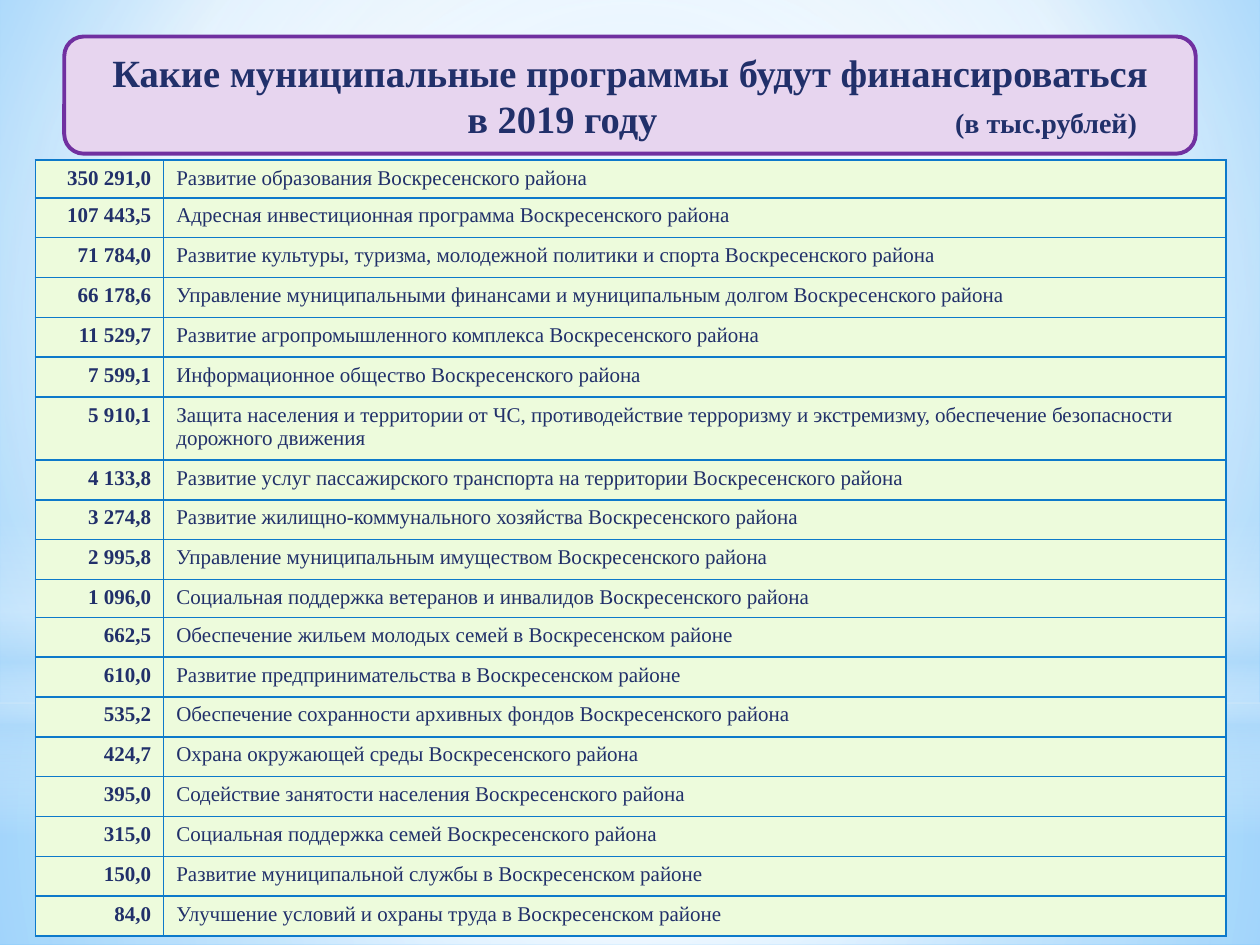
import dataclasses
import typing

import lxml.etree
import pptx
import pptx.dml.color
import pptx.enum.shapes
import pptx.enum.text
import pptx.oxml
import pptx.oxml.ns
import pptx.util

W, H = 10, 7.5
FONT = "Times New Roman"
COLORS = {
    "text": "21306A",
    "title_fill": "E7D5EF",
    "title_line": "7030A0",
    "cell": "EDFBDC",
    "border": "0D79CA",
    "white": "FFFFFF",
    "haze": "B4DCFA",
    "sky": "9ED5FF",
    "deep_sky": "5BB9FF",
}
SHAPES = pptx.enum.shapes.MSO_SHAPE
ALIGN = pptx.enum.text.PP_ALIGN


class Stop(typing.NamedTuple):
    pos: int
    color: str
    alpha: int = 100


@dataclasses.dataclass
class Gradient:
    stops: list[Stop]
    focus: tuple[int, int, int, int] | None = (50, 50, 50, 50)


@dataclasses.dataclass
class Glow:
    shape: int
    top: float
    height: float
    gradient: Gradient


class Program(typing.NamedTuple):
    amount: str
    name: str
    height: float | None = None


SKY = Gradient([Stop(0, "sky"), Stop(60, "white"), Stop(100, "deep_sky")], (20, 10, 20, 60))
GLOWS = [
    Glow(SHAPES.RECTANGLE, 0.744, 0.256, Gradient(
        [Stop(0, "white", 91), Stop(37, "white", 76), Stop(100, "haze", 79)])),
    Glow(SHAPES.RECTANGLE, 0, 0.744, Gradient(
        [Stop(0, "white", 89), Stop(48, "white", 62), Stop(100, "haze", 79)])),
    Glow(SHAPES.RECTANGLE, 0.55, 0.333, Gradient(
        [Stop(0, "white", 0), Stop(29, "white", 30), Stop(45, "haze", 40),
         Stop(55, "white", 26), Stop(65, "haze", 60), Stop(100, "white", 0)], None)),
    Glow(SHAPES.OVAL, 0.233, 0.744, Gradient([Stop(0, "white"), Stop(56, "white", 0)])),
]
PROGRAMS = [
    Program("350 291,0", "Развитие образования Воскресенского района", 0.3),
    Program("107 443,5", "Адресная инвестиционная программа Воскресенского района"),
    Program("71 784,0", "Развитие культуры, туризма, молодежной политики и спорта Воскресенского района"),
    Program("66 178,6", "Управление муниципальными финансами и муниципальным долгом Воскресенского района"),
    Program("11 529,7", "Развитие агропромышленного комплекса Воскресенского района"),
    Program("7 599,1", "Информационное общество Воскресенского района"),
    Program("5 910,1", "Защита населения и территории от ЧС, противодействие терроризму и экстремизму, "
            "обеспечение безопасности дорожного движения", 0.5),
    Program("4 133,8", "Развитие услуг пассажирского транспорта на территории Воскресенского района"),
    Program("3 274,8", "Развитие жилищно-коммунального хозяйства Воскресенского района"),
    Program("2 995,8", "Управление муниципальным имуществом Воскресенского района"),
    Program("1 096,0", "Социальная поддержка ветеранов и инвалидов Воскресенского района", 0.3),
    Program("662,5", "Обеспечение жильем молодых семей в Воскресенском районе"),
    Program("610,0", "Развитие предпринимательства в Воскресенском районе"),
    Program("535,2", "Обеспечение сохранности архивных фондов Воскресенского района"),
    Program("424,7", "Охрана окружающей среды Воскресенского района"),
    Program("395,0", "Содействие занятости населения Воскресенского района"),
    Program("315,0", "Социальная поддержка семей Воскресенского района"),
    Program("150,0", "Развитие муниципальной службы в Воскресенском районе"),
    Program("84,0", "Улучшение условий и охраны труда в Воскресенском районе"),
]


def inches(*values: float) -> list[int]:
    return [pptx.util.Inches(v) for v in values]


def rgb(name: str) -> pptx.dml.color.RGBColor:
    return pptx.dml.color.RGBColor.from_string(COLORS[name])


def set_gradient(fill, parent, gradient: Gradient) -> None:
    fill.solid()
    stops = "".join(
        f'<a:gs pos="{g.pos * 1000}"><a:srgbClr val="{COLORS[g.color]}">'
        f'<a:alpha val="{g.alpha * 1000}"/></a:srgbClr></a:gs>' for g in gradient.stops)
    if gradient.focus:
        edges = " ".join(f'{k}="{v * 1000}"' for k, v in zip("ltrb", gradient.focus))
        direction = f'<a:path path="circle"><a:fillToRect {edges}/></a:path>'
    else:
        direction = '<a:lin ang="5400000" scaled="0"/>'
    xml = (f'<a:gradFill {pptx.oxml.ns.nsdecls("a")} rotWithShape="1">'
           f"<a:gsLst>{stops}</a:gsLst>{direction}</a:gradFill>")
    solid = parent.find(pptx.oxml.ns.qn("a:solidFill"))
    parent.replace(solid, pptx.oxml.parse_xml(xml))


def set_font(font, size: float, bold: bool) -> None:
    font.name = FONT
    font.size = pptx.util.Pt(size)
    font.bold = bold
    font.color.rgb = rgb("text")


def add_glow(s, glow: Glow) -> None:
    sp = s.shapes.add_shape(glow.shape, *inches(0, glow.top * H, W, glow.height * H))
    sp.shadow.inherit = False
    sp.line.fill.background()
    set_gradient(sp.fill, sp._element.spPr, glow.gradient)


def add_title(s) -> None:
    sp = s.shapes.add_shape(SHAPES.ROUNDED_RECTANGLE, *inches(0.51, 0.29, 8.98, 0.93))
    sp.shadow.inherit = False
    sp.fill.solid()
    sp.fill.fore_color.rgb = rgb("title_fill")
    sp.line.color.rgb = rgb("title_line")
    sp.line.width = pptx.util.Pt(2.25)
    tf = sp.text_frame
    tf.word_wrap = True
    tf.vertical_anchor = pptx.enum.text.MSO_ANCHOR.MIDDLE
    p = tf.paragraphs[0]
    p.alignment = ALIGN.CENTER
    p.add_run().text = "Какие муниципальные программы будут финансироваться"
    set_font(p.font, 22, True)
    p = tf.add_paragraph()
    p.alignment = ALIGN.LEFT
    tabs = lxml.etree.SubElement(p._p.get_or_add_pPr(), pptx.oxml.ns.qn("a:tabLst"))
    for pos, kind in ((3.81, "ctr"), (8.37, "r")):
        lxml.etree.SubElement(tabs, pptx.oxml.ns.qn("a:tab"),
                              pos=str(pptx.util.Inches(pos)), algn=kind)
    for text, size in (("\tв 2019 году\t", 22), ("(в тыс.рублей)", 16)):
        r = p.add_run()
        r.text = text
        set_font(r.font, size, True)


def set_borders(cell) -> None:
    tcPr = cell._tc.get_or_add_tcPr()
    for i, side in enumerate(("lnL", "lnR", "lnT", "lnB")):
        tcPr.insert(i, pptx.oxml.parse_xml(
            f'<a:{side} {pptx.oxml.ns.nsdecls("a")} w="12700"><a:solidFill>'
            f'<a:srgbClr val="{COLORS["border"]}"/></a:solidFill></a:{side}>'))


def fill_cell(cell, text: str, align, bold: bool) -> None:
    cell.fill.solid()
    cell.fill.fore_color.rgb = rgb("cell")
    set_borders(cell)
    p = cell.text_frame.paragraphs[0]
    p.alignment = align
    p.add_run().text = text
    set_font(p.font, 12, bold)


def add_programs(s, programs: list[Program]) -> None:
    height = 6.16
    frame = s.shapes.add_table(len(programs), 2, *inches(0.28, 1.27, 9.45, height))
    table = frame.table
    table.first_row = table.horz_banding = False
    for column, width in zip(table.columns, inches(1.02, 8.43)):
        column.width = width
    fixed = [pr.height for pr in programs if pr.height]
    regular = (height - sum(fixed)) / (len(programs) - len(fixed))
    for i, program in enumerate(programs):
        table.rows[i].height = pptx.util.Inches(program.height or regular)
        fill_cell(table.cell(i, 0), program.amount, ALIGN.RIGHT, True)
        fill_cell(table.cell(i, 1), program.name, ALIGN.LEFT, False)


def main() -> None:
    prs = pptx.Presentation()
    prs.slide_width, prs.slide_height = inches(W, H)
    s = prs.slides.add_slide(prs.slide_layouts[6])
    fill = s.background.fill
    fill.solid()
    set_gradient(fill, s._element.cSld.bg.bgPr, SKY)
    for glow in GLOWS:
        add_glow(s, glow)
    add_title(s)
    add_programs(s, PROGRAMS)
    prs.save("out.pptx")


if __name__ == "__main__":
    main()
